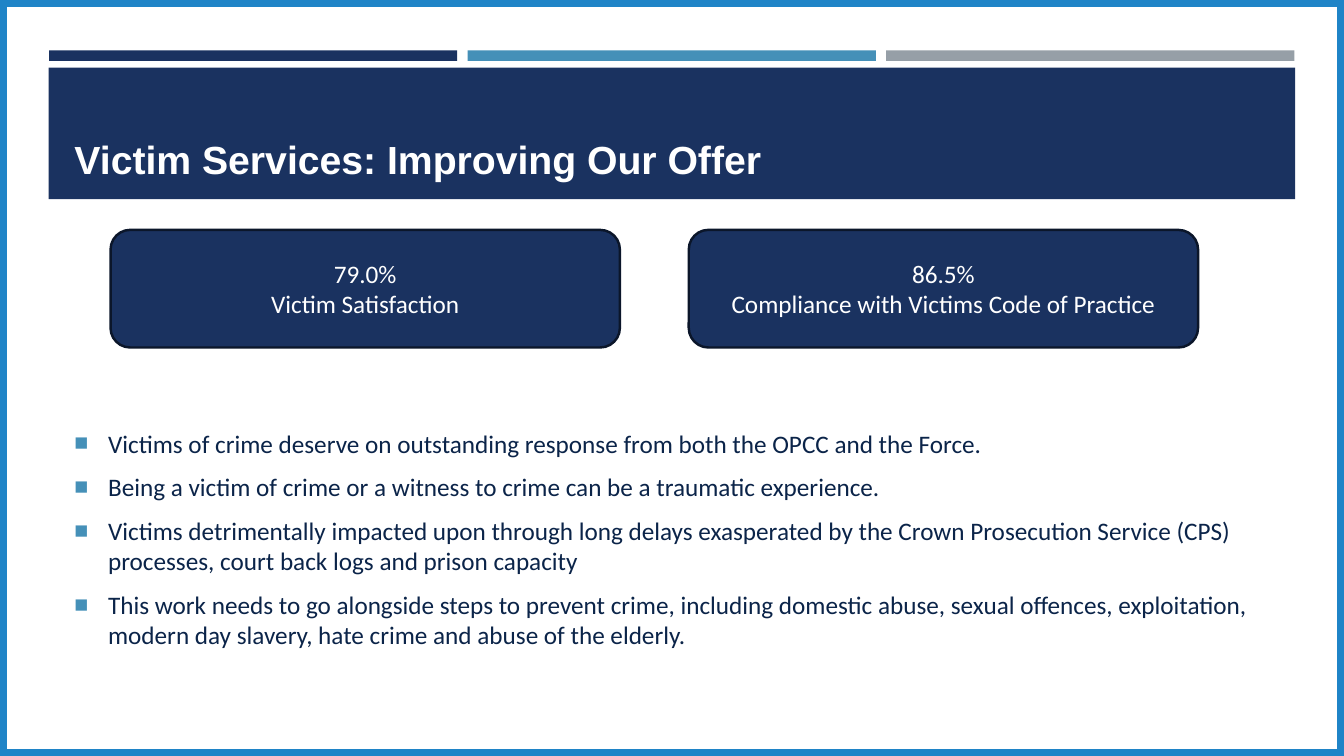
from lxml import etree
from pptx import Presentation
from pptx import util as u
from pptx.dml.color import RGBColor
from pptx.enum import shapes, text
from pptx.oxml.ns import qn

NAVY = RGBColor(0x1A, 0x32, 0x60)
DARK_NAVY = RGBColor(0x0B, 0x16, 0x2A)
BODY_NAVY = RGBColor(0x0B, 0x24, 0x49)
BLUE = RGBColor(0x45, 0x90, 0xB8)
FRAME_BLUE = RGBColor(0x1F, 0x84, 0xC7)
GREY = RGBColor(0x96, 0x9F, 0xA7)
WHITE = RGBColor(0xFF, 0xFF, 0xFF)

presentation = Presentation()
presentation.slide_width = u.Pt(960)
presentation.slide_height = u.Pt(540)
slide = presentation.slides.add_slide(presentation.slide_layouts[1])
title, body = slide.placeholders


def add_box(kind, left, top, width, height, fill=None, line=None, line_width=0):
    shape = slide.shapes.add_shape(
        kind, u.Pt(left), u.Pt(top), u.Pt(width), u.Pt(height))
    shape.shadow.inherit = False
    if fill is None:
        shape.fill.background()
    else:
        shape.fill.solid()
        shape.fill.fore_color.rgb = fill
    if line is None:
        shape.line.fill.background()
    else:
        shape.line.color.rgb = line
        shape.line.width = u.Pt(line_width)
    return shape


def add_run(paragraph, wording, font, size, color, bold=False):
    run = paragraph.add_run()
    run.text = wording
    run.font.name = font
    run.font.size = u.Pt(size)
    run.font.color.rgb = color
    run.font.bold = bold


# Three accent strips above the title banner
for column, color in enumerate((NAVY, BLUE, GREY)):
    add_box(shapes.MSO_SHAPE.RECTANGLE, 35 + 299 * column, 36, 291.6, 7.5, color)

# Title banner and title, brought in front of it
add_box(shapes.MSO_SHAPE.RECTANGLE, 34.8, 48.4, 890.4, 93.8, NAVY)
title.element.getparent().append(title.element)
title.left, title.top = u.Pt(46), u.Pt(93)
title.width, title.height = u.Pt(766), u.Pt(41)
title.text_frame.auto_size = text.MSO_AUTO_SIZE.NONE
title.text_frame.vertical_anchor = text.MSO_ANCHOR.TOP
title_paragraph = title.text_frame.paragraphs[0]
title_paragraph.alignment = text.PP_ALIGN.LEFT
add_run(title_paragraph, "Victim Services: Improving Our Offer", "Arial", 28, WHITE, True)

# Headline figures
figures = (
    ("79.0%", "Victim Satisfaction"),
    ("86.5%", "Compliance with Victims Code of Practice"),
)
for column, lines in enumerate(figures):
    card = add_box(shapes.MSO_SHAPE.ROUNDED_RECTANGLE, 79 + 413 * column, 164.2,
                   363.8, 84, NAVY, DARK_NAVY, 1.75)
    frame = card.text_frame
    frame.word_wrap = True
    frame.vertical_anchor = text.MSO_ANCHOR.MIDDLE
    for index, wording in enumerate(lines):
        paragraph = frame.add_paragraph() if index else frame.paragraphs[0]
        paragraph.alignment = text.PP_ALIGN.CENTER
        add_run(paragraph, wording, "Calibri", 18, WHITE)

# Bulleted list
points = (
    "Victims of crime deserve on outstanding response from both the OPCC and the Force.",
    "Being a victim of crime or a witness to crime can be a traumatic experience.",
    "Victims detrimentally impacted upon through long delays exasperated by the Crown "
    "Prosecution Service (CPS) processes, court back logs and prison capacity",
    "This work needs to go alongside steps to prevent crime, including domestic abuse, "
    "sexual offences, exploitation, modern day slavery, hate crime and abuse of the elderly.",
)
body.left, body.top = u.Pt(46), u.Pt(277.5)
body.width, body.height = u.Pt(868), u.Pt(214.6)
frame = body.text_frame
frame.auto_size = text.MSO_AUTO_SIZE.NONE
frame.vertical_anchor = text.MSO_ANCHOR.MIDDLE
for index, wording in enumerate(points):
    paragraph = frame.add_paragraph() if index else frame.paragraphs[0]
    paragraph.space_before = u.Pt(3.6 if index else 0)
    paragraph.space_after = u.Pt(6)
    properties = paragraph._p.get_or_add_pPr()
    properties.set("marL", str(u.Pt(24)))
    properties.set("indent", str(u.Pt(-24)))
    bullet_color = etree.SubElement(properties, qn("a:buClr"))
    etree.SubElement(bullet_color, qn("a:srgbClr"), val=str(BLUE))
    etree.SubElement(properties, qn("a:buSzPct"), val="92000")
    etree.SubElement(properties, qn("a:buFont"), typeface="Arial")
    etree.SubElement(properties, qn("a:buChar"), char="■")
    add_run(paragraph, wording, "Calibri", 18, BODY_NAVY)

# Frame around the slide edge
add_box(shapes.MSO_SHAPE.RECTANGLE, 0, 0, 960, 540, line=FRAME_BLUE, line_width=10)

presentation.save("out.pptx")
